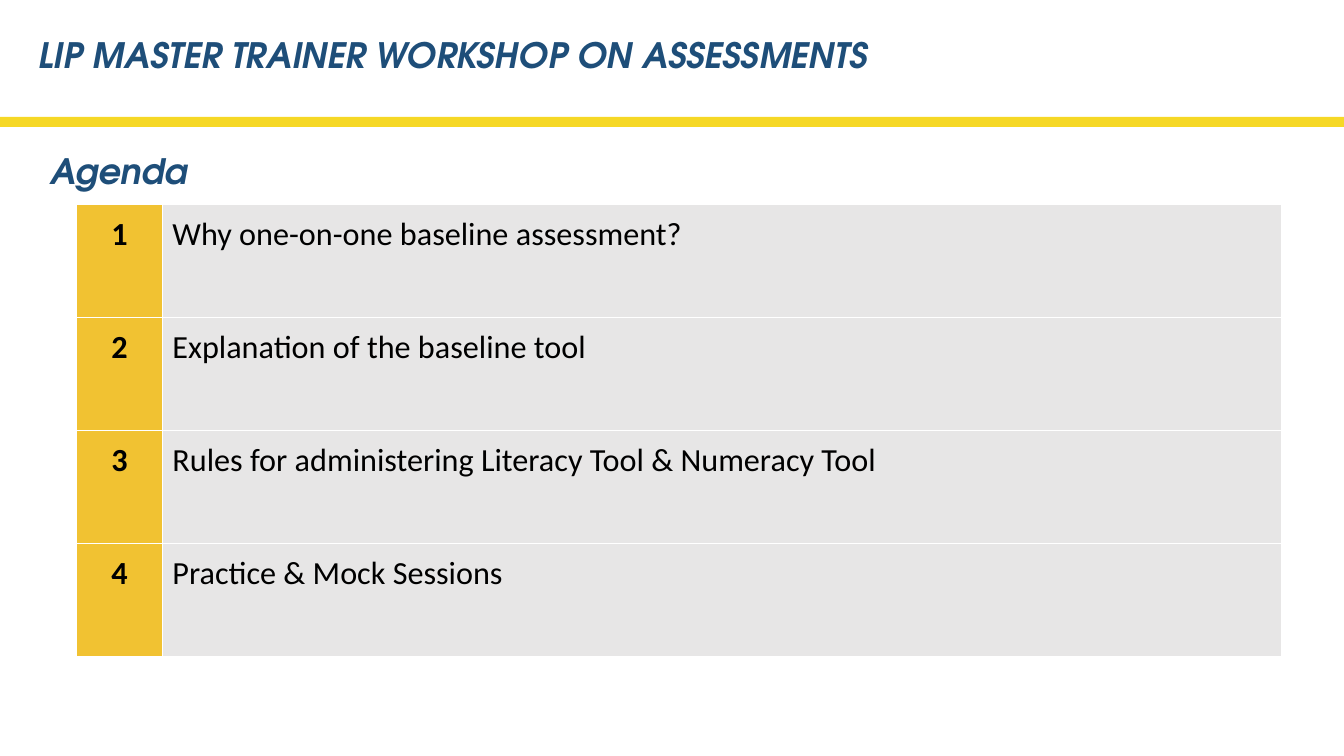
from dataclasses import dataclass

import lxml.etree
import pptx
import pptx.dml.color
import pptx.enum.shapes
import pptx.enum.text
import pptx.oxml.ns
import pptx.util

Inches = pptx.util.Inches
Pt = pptx.util.Pt
RGB = pptx.dml.color.RGBColor.from_string
Align = pptx.enum.text.PP_ALIGN


@dataclass(frozen=True)
class Theme:
    navy: str = "1E4E79"
    yellow: str = "F6D826"
    gold: str = "F1C232"
    grey: str = "E7E6E6"
    white: str = "FFFFFF"
    black: str = "000000"
    heading_font: str = "TeX Gyre Adventor"
    body_font: str = "Calibri"
    heading_size: float = 25
    body_size: float = 23
    border_width: float = 0.75


@dataclass(frozen=True)
class Heading:
    text: str
    left: float
    top: float
    width: float
    height: float


@dataclass(frozen=True)
class CellStyle:
    fill: str
    bold: bool
    alignment: Align


THEME = Theme()
WORKSHOP = Heading("LIP MASTER TRAINER WORKSHOP ON ASSESSMENTS", 0.28, 0.17, 11.48, 0.69)
AGENDA = Heading("Agenda", 0.4, 1.32, 11.48, 0.62)
TOPICS = [
    "Why one-on-one baseline assessment?",
    "Explanation of the baseline tool",
    "Rules for administering Literacy Tool & Numeracy Tool",
    "Practice & Mock Sessions",
]
NUMBER_STYLE = CellStyle(THEME.gold, True, Align.CENTER)
TOPIC_STYLE = CellStyle(THEME.grey, False, Align.LEFT)
COLUMN_WIDTHS = (0.85, 11.1)
ROW_HEIGHT = 1.12
MARGINS = {f"margin_{side}": Inches(0.1) for side in ("left", "right", "top", "bottom")}
HEADING_FRAME = MARGINS | {
    "word_wrap": True,
    "auto_size": pptx.enum.text.MSO_AUTO_SIZE.SHAPE_TO_FIT_TEXT,
    "vertical_anchor": pptx.enum.text.MSO_ANCHOR.TOP,
}
HEADING_FONT = {
    "name": THEME.heading_font,
    "size": Pt(THEME.heading_size),
    "bold": True,
    "italic": True,
}
BODY_FONT = {"name": THEME.body_font, "size": Pt(THEME.body_size)}


def apply_format(target: object, values: dict) -> None:
    for attribute, value in values.items():
        setattr(target, attribute, value)


def write_text(paragraph, text: str, font: dict, color: str, layout: dict) -> None:
    run = paragraph.add_run()
    run.text = text
    apply_format(run.font, font)
    run.font.color.rgb = RGB(color)
    apply_format(paragraph, layout)


def format_heading(shape, heading: Heading) -> None:
    apply_format(shape, {
        side: Inches(getattr(heading, side)) for side in ("left", "top", "width", "height")
    })
    apply_format(shape.text_frame, HEADING_FRAME)
    write_text(shape.text_frame.paragraphs[0], heading.text, HEADING_FONT, THEME.navy,
               {"line_spacing": 1.15, "alignment": Align.LEFT})


def add_borders(cell) -> None:
    qn = pptx.oxml.ns.qn
    properties = cell._tc.get_or_add_tcPr()
    for side in ("lnL", "lnR", "lnT", "lnB"):
        border = lxml.etree.SubElement(properties, qn(f"a:{side}"), w=str(Pt(THEME.border_width)))
        solid = lxml.etree.SubElement(border, qn("a:solidFill"))
        lxml.etree.SubElement(solid, qn("a:srgbClr"), val=THEME.white)


def fill_cell(cell, text: str, style: CellStyle) -> None:
    apply_format(cell, MARGINS)
    add_borders(cell)
    cell.fill.solid()
    cell.fill.fore_color.rgb = RGB(style.fill)
    write_text(cell.text_frame.paragraphs[0], text, BODY_FONT | {"bold": style.bold},
               THEME.black, {"alignment": style.alignment})


def add_divider(slide) -> None:
    divider = slide.shapes.add_shape(
        pptx.enum.shapes.MSO_SHAPE.RECTANGLE, 0, Inches(1.16), Inches(13.39), Inches(0.1))
    divider.shadow.inherit = False
    divider.fill.solid()
    divider.fill.fore_color.rgb = RGB(THEME.yellow)
    divider.line.fill.background()


def add_agenda_table(slide) -> None:
    agenda = slide.shapes.add_table(
        len(TOPICS), len(COLUMN_WIDTHS), Inches(0.76), Inches(2.03),
        Inches(sum(COLUMN_WIDTHS)), Inches(ROW_HEIGHT * len(TOPICS))).table
    apply_format(agenda, {"first_row": False, "horz_banding": False})
    for column, width in zip(agenda.columns, COLUMN_WIDTHS):
        column.width = Inches(width)
    for number, (row, topic) in enumerate(zip(agenda.rows, TOPICS), 1):
        row.height = Inches(ROW_HEIGHT)
        fill_cell(row.cells[0], str(number), NUMBER_STYLE)
        fill_cell(row.cells[1], topic, TOPIC_STYLE)


def main() -> None:
    presentation = pptx.Presentation()
    apply_format(presentation, {"slide_width": Inches(13.33), "slide_height": Inches(7.5)})
    slide = presentation.slides.add_slide(presentation.slide_layouts.get_by_name("Title Only"))
    add_divider(slide)
    format_heading(slide.shapes.title, WORKSHOP)
    add_agenda_table(slide)
    format_heading(slide.shapes.add_textbox(0, 0, 0, 0), AGENDA)
    presentation.save("out.pptx")


if __name__ == "__main__":
    main()
